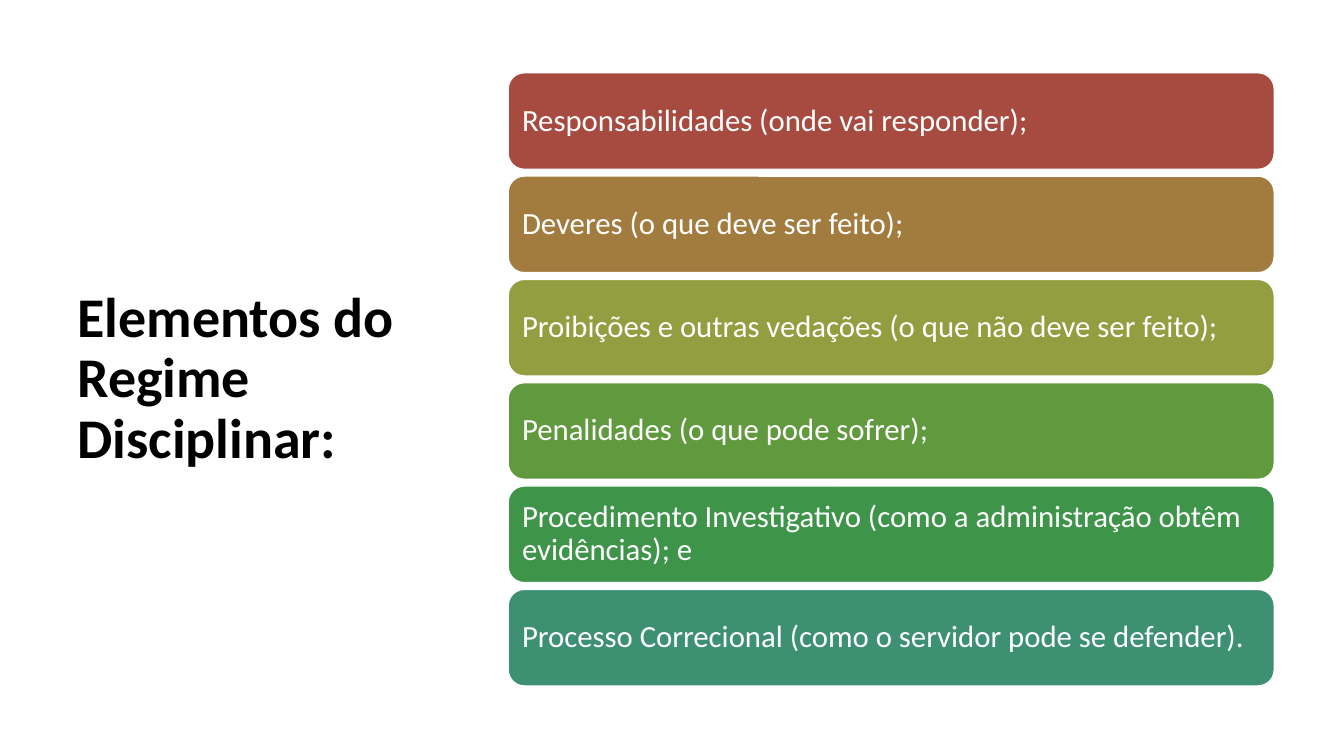
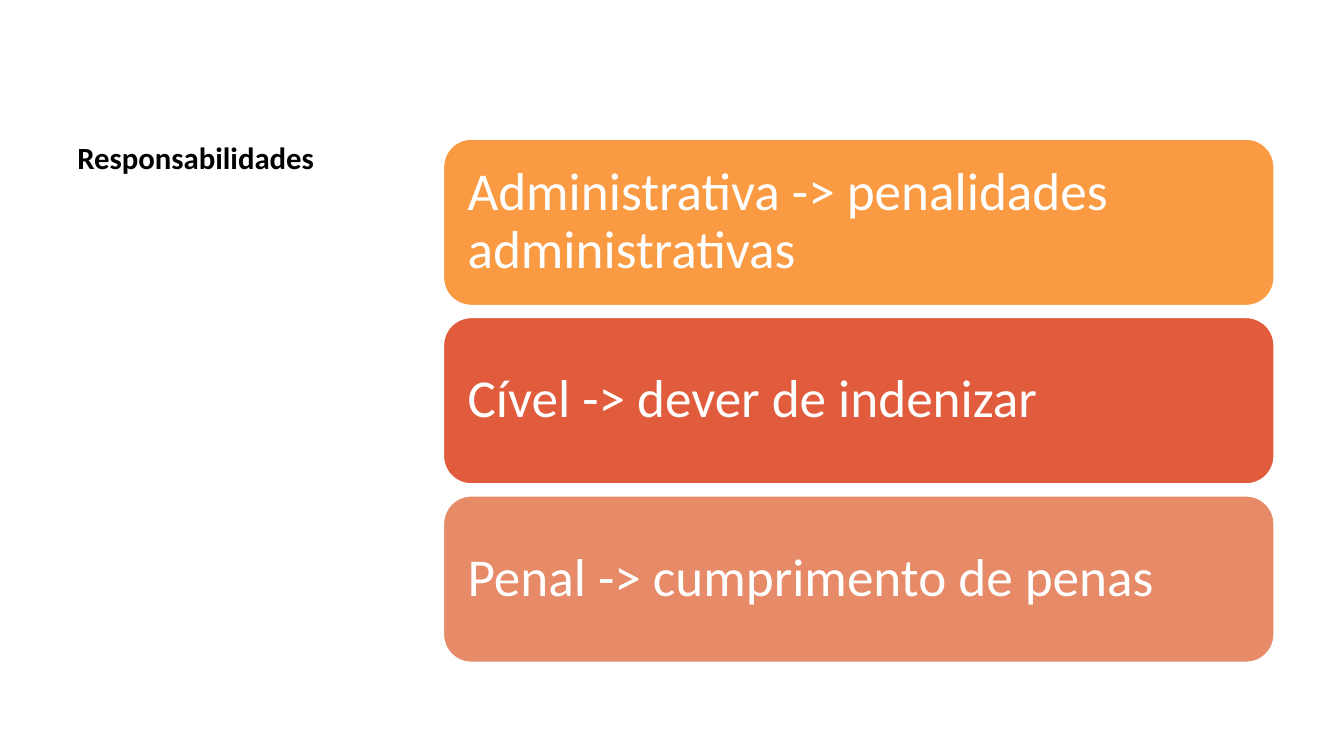
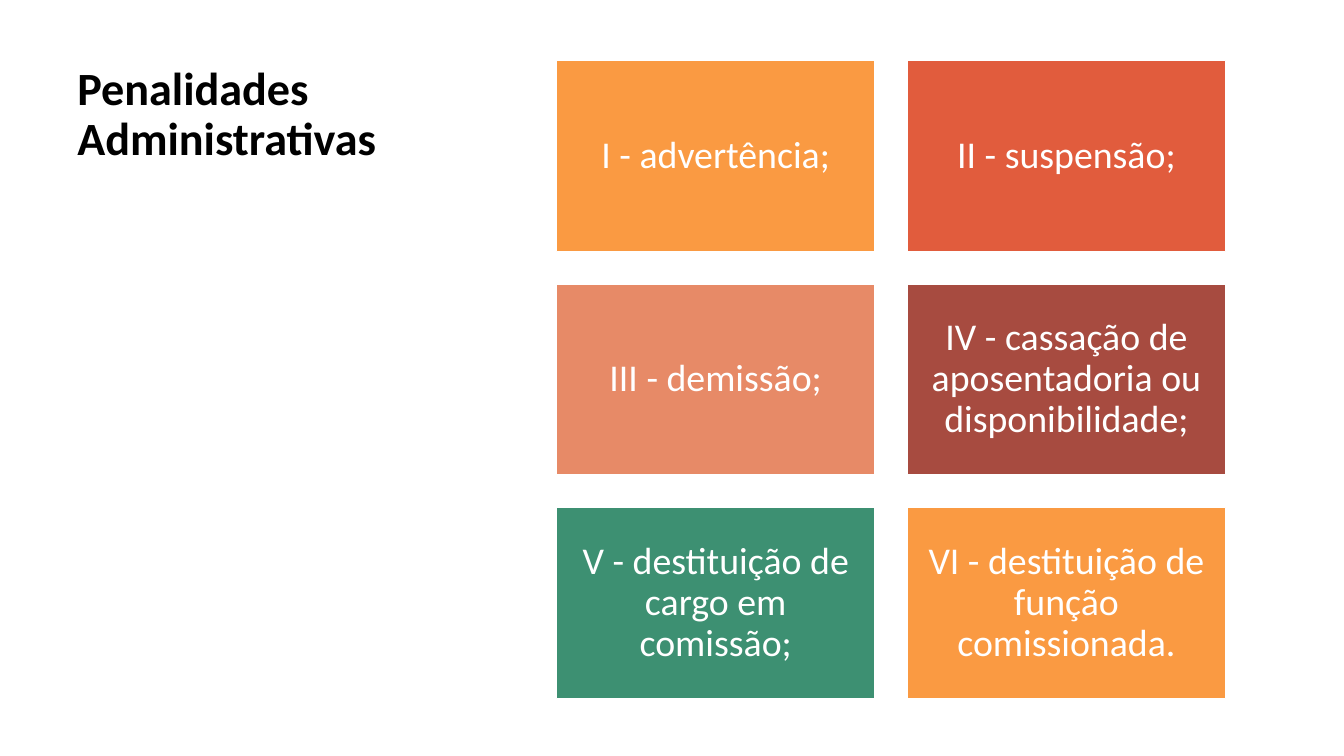
from dataclasses import dataclass

from pptx import Presentation
from pptx.dml.color import RGBColor as Rgb
from pptx.enum.shapes import MSO_SHAPE as Shape
from pptx.enum.text import MSO_ANCHOR as Anchor, PP_ALIGN as Align
from pptx.util import Pt


@dataclass(frozen=True)
class Theme:
    font: str = "Calibri"
    ink: str = "000000"
    paper: str = "FFFFFF"
    orange: str = "FA9A42"
    red: str = "E15C3D"
    salmon: str = "E78A67"
    brick: str = "A74B40"
    ochre: str = "A27C3F"
    olive: str = "929E3F"
    leaf: str = "60993E"
    green: str = "3E9549"
    teal: str = "3D9072"
    head: tuple = (40, 22, 33)
    body: tuple = (22, 38, 27)
    lead: float = 0.9


T = Theme()


def write(shape, text, size, color, align=Align.LEFT, bold=False):
    frame = shape.text_frame
    frame.word_wrap = True
    para = frame.paragraphs[0]
    para.text = text
    para.alignment = align
    para.line_spacing = T.lead
    font = para.font
    font.name, font.size, font.bold = T.font, Pt(size), bold
    font.color.rgb = Rgb.from_string(color)
    return frame


def title(slide, box, text, size, anchor=Anchor.TOP):
    label = slide.shapes.add_textbox(*map(Pt, box))
    write(label, text, size, T.ink, bold=True).vertical_anchor = anchor


def card(slide, box, text, fill, kind, size, inset, align):
    shape = slide.shapes.add_shape(kind, *map(Pt, box))
    shape.shadow.inherit = False
    shape.fill.solid()
    shape.fill.fore_color.rgb = Rgb.from_string(fill)
    shape.line.color.rgb = Rgb.from_string(T.paper)
    shape.line.width = Pt(1)
    frame = write(shape, text, size, T.paper, align)
    frame.vertical_anchor = Anchor.MIDDLE
    frame.margin_left = frame.margin_right = Pt(inset)
    frame.margin_top = frame.margin_bottom = Pt(inset)


def grid(slide, box, items, cols, gap, **style):
    """Fill the box row by row with equal cards, one per (text, fill)."""
    left, top, width, height = box
    rows = len(items) // cols
    wide = (width - gap * (cols - 1)) / cols
    high = (height - gap * (rows - 1)) / rows
    for i, (text, fill) in enumerate(items):
        row, col = divmod(i, cols)
        place = (left + col * (wide + gap), top + row * (high + gap), wide, high)
        card(slide, place, text, fill, **style)


def stack(slide, box, items, gap, size, inset):
    grid(slide, box, items, 1, gap, kind=Shape.ROUNDED_RECTANGLE,
         size=size, inset=inset, align=Align.LEFT)


def parts(slide):
    title(slide, (48.2, 43.2, 275, 455.8), "Elementos do Regime Disciplinar:",
          T.head[0], Anchor.MIDDLE)
    stack(slide, (363, 52, 547.2, 438), [
        ("Responsabilidades (onde vai responder);", T.brick),
        ("Deveres (o que deve ser feito);", T.ochre),
        ("Proibições e outras vedações (o que não deve ser feito);", T.olive),
        ("Penalidades (o que pode sofrer);", T.leaf),
        ("Procedimento Investigativo (como a administração obtêm evidências); e",
         T.green),
        ("Processo Correcional (como o servidor pode se defender).", T.teal),
    ], gap=4.8, size=T.body[0], inset=6.6)


def duties(slide):
    title(slide, (48.2, 98.6, 229, 375.8), "Responsabilidades", T.head[1])
    stack(slide, (316.8, 99.4, 593.3, 373.7), [
        ("Administrativa -> penalidades administrativas", T.orange),
        ("Cível -> dever de indenizar", T.red),
        ("Penal -> cumprimento de penas", T.salmon),
    ], gap=8.6, size=T.body[1], inset=11.4)


def penalties(slide):
    title(slide, (48.2, 43.2, 275, 455.8), "Penalidades Administrativas", T.head[2])
    grid(slide, (397.5, 43.2, 478, 455.8), [
        ("I - advertência;", T.orange),
        ("II - suspensão;", T.red),
        ("III - demissão;", T.salmon),
        ("IV - cassação de aposentadoria ou disponibilidade;", T.brick),
        ("V - destituição de cargo em comissão;", T.teal),
        ("VI - destituição de função comissionada.", T.orange),
    ], cols=2, gap=23, kind=Shape.RECTANGLE, size=T.body[2], inset=8.1,
        align=Align.CENTER)


def main():
    deck = Presentation()
    deck.slide_width, deck.slide_height = Pt(960), Pt(540)
    for build in (parts, duties, penalties):
        build(deck.slides.add_slide(deck.slide_layouts[6]))
    deck.save("out.pptx")


if __name__ == "__main__":
    main()
